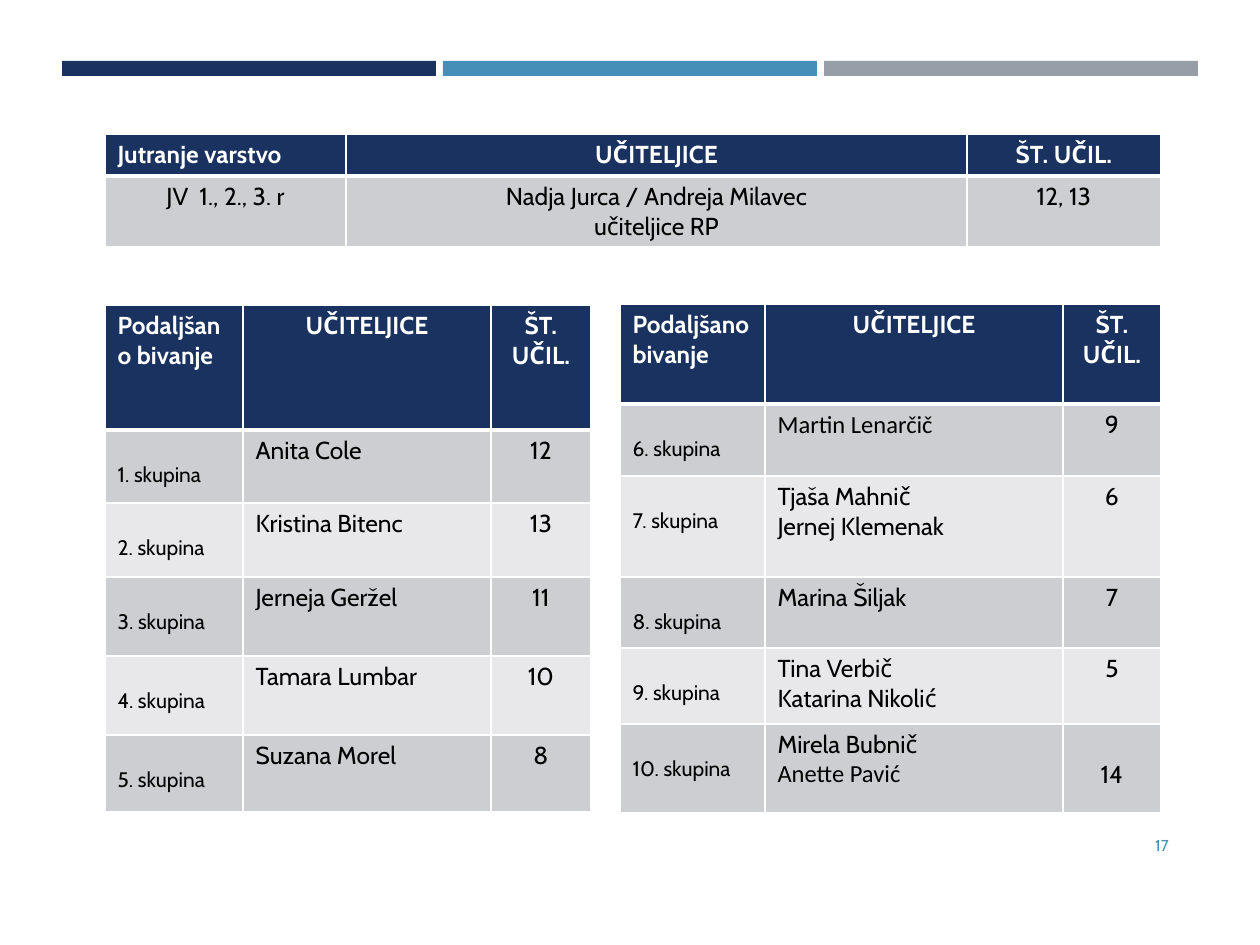
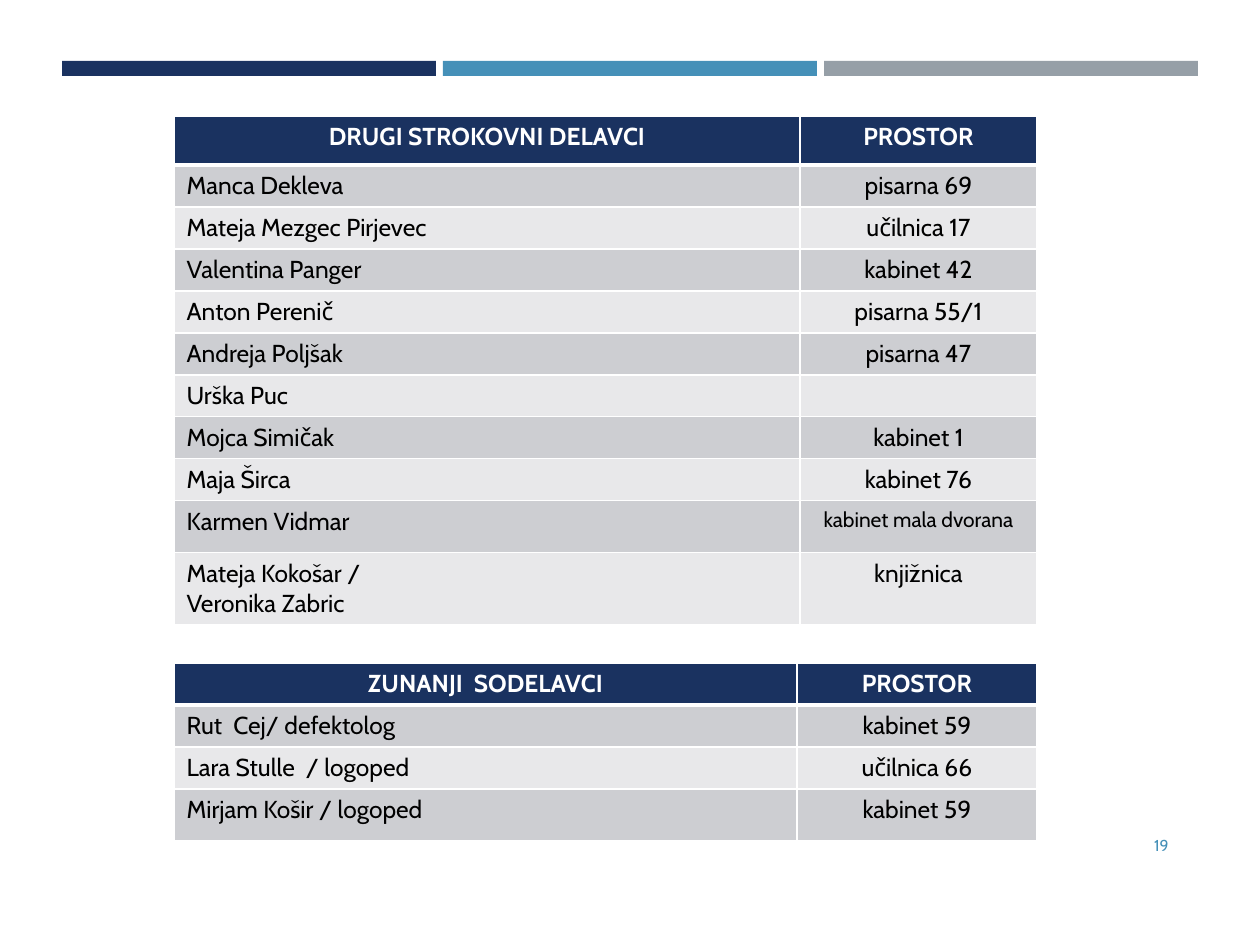
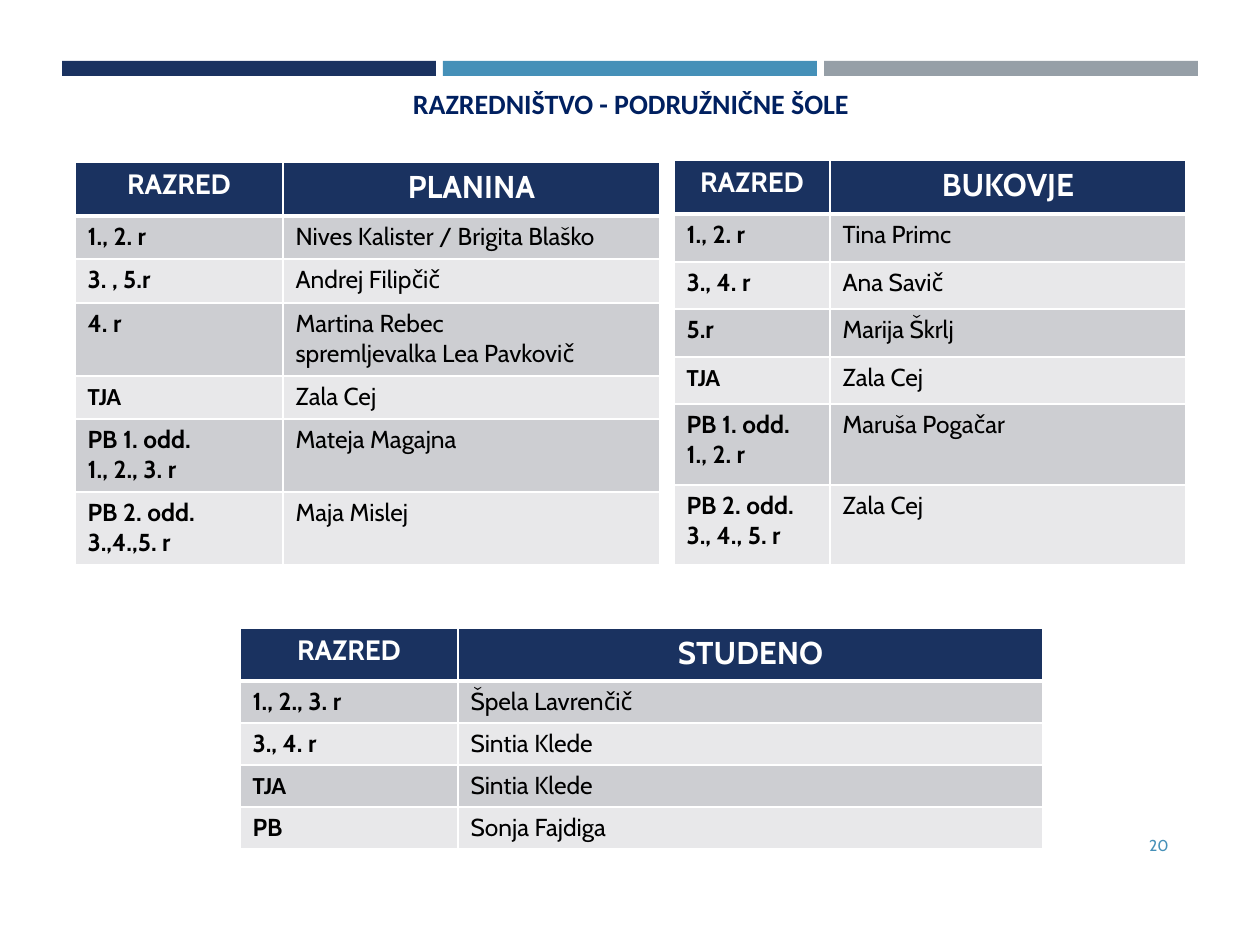
from lxml.etree import SubElement
from pptx import Presentation
from pptx.dml.color import RGBColor
from pptx.enum.shapes import MSO_SHAPE
from pptx.enum.text import MSO_ANCHOR, MSO_AUTO_SIZE, PP_ALIGN
from pptx.oxml.ns import qn
from pptx.util import Emu, Pt

PX_PER_INCH = 126
COLORS = {
    "navy": "1A3260", "blue": "4590B8", "gray": "969FA7", "title": "002060",
    "dark_row": "CDCED2", "light_row": "E8E8EA", "white": "FFFFFF", "black": "000000",
}
TITLE_ONLY, BLANK = 5, 6

# Cell formats
LEFT = {"align": PP_ALIGN.LEFT}
CENTER = {"align": PP_ALIGN.CENTER}
BOLD = {"bold": True}
CALIBRI = {"font": "Calibri"}
HEADER = {"align": PP_ALIGN.CENTER, "bold": True, "color": "white"}
GROUP = {"size": 12, "pad_top": 32}


def px(length):
    return Emu(round(length * 914400 / PX_PER_INCH))


def rgb(name):
    return RGBColor.from_string(COLORS[name])


def write_text(frame, text, size=14, font="Cabin", color="black", bold=False,
               align=PP_ALIGN.LEFT, spacing=None):
    """Write one paragraph a line; a line may be (text, own format)."""
    lines = text if isinstance(text, list) else text.split("\n")
    for index, line in enumerate(lines):
        words, own = line if isinstance(line, tuple) else (line, {})
        paragraph = frame.add_paragraph() if index else frame.paragraphs[0]
        paragraph.alignment = align
        if spacing:
            paragraph.line_spacing = spacing
        if not words:
            # An empty cell keeps the line height of its text size
            SubElement(paragraph._p, qn("a:endParaRPr"), sz=str(size * 100))
            continue
        run = paragraph.add_run()
        run.text = words
        run.font.size = Pt(size)
        run.font.name = own.get("font", font)
        run.font.bold = bold
        run.font.color.rgb = rgb(color)


def add_bands(slide):
    for index, color in enumerate(("navy", "blue", "gray")):
        band = slide.shapes.add_shape(
            MSO_SHAPE.RECTANGLE, px(62 + 381 * index), px(61), px(374), px(15))
        band.shadow.inherit = False
        band.fill.solid()
        band.fill.fore_color.rgb = rgb(color)
        band.line.fill.background()


def add_page_number(slide, number):
    box = slide.shapes.add_textbox(px(1075), px(820), px(106), px(50))
    box.text_frame.word_wrap = True
    box.text_frame.vertical_anchor = MSO_ANCHOR.MIDDLE
    write_text(box.text_frame, number, size=9, color="blue", align=PP_ALIGN.RIGHT)


def add_page(deck, number, layout=BLANK):
    slide = deck.slides.add_slide(deck.slide_layouts[layout])
    add_bands(slide)
    add_page_number(slide, number)
    return slide


def set_title(slide, text):
    title = slide.shapes.title
    title.left, title.top, title.width, title.height = px(88), px(84), px(1086), px(56)
    frame = title.text_frame
    frame.auto_size = MSO_AUTO_SIZE.NONE
    frame.vertical_anchor = MSO_ANCHOR.TOP
    write_text(frame, text, size=16, font="Calibri", color="title", bold=True,
               align=PP_ALIGN.CENTER, spacing=0.9)


def set_borders(cell, row):
    """White rules, with a thick one under the header row."""
    widths = {"L": 1, "R": 1, "T": 3 if row == 1 else 1, "B": 3 if row == 0 else 1}
    properties = cell._tc.get_or_add_tcPr()
    for side, width in widths.items():
        line = SubElement(properties, qn(f"a:ln{side}"), w=str(Pt(width)))
        fill = SubElement(line, qn("a:solidFill"))
        SubElement(fill, qn("a:srgbClr"), val=COLORS["white"])


def fill_cell(cell, content, row, column_format):
    text, own = content if isinstance(content, tuple) else (content, {})
    text_format = {**(column_format if row else HEADER), **own}
    cell.margin_top = px(text_format.pop("pad_top", 6))
    set_borders(cell, row)
    cell.fill.solid()
    shade = "dark_row" if row % 2 else "light_row"
    cell.fill.fore_color.rgb = rgb(shade if row else "navy")
    write_text(cell.text_frame, text, **text_format)


def add_staff_table(slide, left, top, widths, heights, formats, rows):
    table = slide.shapes.add_table(
        len(heights), len(widths), px(left), px(top),
        px(sum(widths)), px(sum(heights))).table
    for column, width in zip(table.columns, widths):
        column.width = px(width)
    for index, (row, height) in enumerate(zip(table.rows, heights)):
        row.height = px(height)
        for cell, content, column_format in zip(row.cells, rows[index], formats):
            fill_cell(cell, content, index, column_format)


def add_care_page(deck):
    slide = add_page(deck, "17")
    teachers, room = "UČITELJICE", "ŠT. UČIL."
    after_school = [("Podaljšano bivanje", LEFT), teachers, room]

    # Morning care
    add_staff_table(slide, 105, 134, [241, 621, 194], [42, 70], [CENTER] * 3, [
        [("Jutranje varstvo", LEFT), teachers, room],
        ["JV  1., 2., 3. r", "Nadja Jurca / Andreja Milavec\nučiteljice RP", "12, 13"],
    ])

    # After-school groups
    formats = [GROUP, LEFT, CENTER]
    add_staff_table(slide, 105, 305, [138, 248, 100], [125, 73, 74, 79, 79, 77], formats, [
        after_school,
        ["1. skupina", "Anita Cole", "12"],
        ["2. skupina", "Kristina Bitenc", "13"],
        ["3. skupina", "Jerneja Geržel", "11"],
        ["4. skupina", "Tamara Lumbar", "10"],
        ["5. skupina", "Suzana Morel", "8"],
    ])
    add_staff_table(slide, 620, 304, [145, 298, 98], [100, 72, 101, 71, 76, 89], formats, [
        after_school,
        ["6. skupina", ("Martin Lenarčič", CALIBRI), "9"],
        ["7. skupina", "Tjaša Mahnič\nJernej Klemenak", "6"],
        ["8. skupina", "Marina Šiljak", "7"],
        ["9. skupina", "Tina Verbič\nKatarina Nikolić", "5"],
        ["10. skupina", ["Mirela Bubnič", ("Anette Pavić", CALIBRI)],
         ("14", {"pad_top": 36})],
    ])


def add_specialists_page(deck):
    slide = add_page(deck, "19")
    formats = [LEFT, CENTER]

    # School specialists
    add_staff_table(slide, 174, 116, [626, 237], [49] + [42] * 8 + [52, 72], formats, [
        ["DRUGI STROKOVNI DELAVCI", "PROSTOR"],
        ["Manca Dekleva", "pisarna 69"],
        ["Mateja Mezgec Pirjevec", "učilnica 17"],
        ["Valentina Panger", "kabinet 42"],
        ["Anton Perenič", "pisarna 55/1"],
        ["Andreja Poljšak", "pisarna 47"],
        ["Urška Puc", ""],
        ["Mojca Simičak", "kabinet 1"],
        ["Maja Širca", "kabinet 76"],
        ["Karmen Vidmar", ("kabinet mala dvorana", {"size": 12})],
        ["Mateja Kokošar /\nVeronika Zabric", "knjižnica"],
    ])

    # External specialists
    add_staff_table(slide, 174, 663, [623, 240], [42, 42, 42, 52], formats, [
        ["ZUNANJI  SODELAVCI", "PROSTOR"],
        ["Rut  Cej/ defektolog", "kabinet 59"],
        ["Lara Stulle  / logoped", "učilnica 66"],
        ["Mirjam Košir / logoped", "kabinet 59"],
    ])


def add_branch_schools_page(deck):
    slide = add_page(deck, "20", TITLE_ONLY)
    set_title(slide, "RAZREDNIŠTVO - PODRUŽNIČNE ŠOLE")
    formats = [BOLD, LEFT]
    english = ("TJA", CALIBRI)

    def add_school(left, top, widths, heights, school, classes):
        header = [("RAZRED", {"size": 16}), (school, {"size": 18})]
        add_staff_table(slide, left, top, widths, heights, formats, [header] + classes)

    add_school(75, 162, [208, 377], [54, 43, 44, 73, 43, 73, 73], "PLANINA", [
        ["1., 2. r", "Nives Kalister / Brigita Blaško"],
        ["3. , 5.r", "Andrej Filipčič"],
        ["4. r", "Martina Rebec\nspremljevalka Lea Pavkovič"],
        [english, "Zala Cej"],
        ["PB 1. odd.\n1., 2., 3. r", "Mateja Magajna"],
        ["PB 2. odd.\n3.,4.,5. r", "Maja Mislej"],
    ])
    add_school(674, 160, [156, 356], [54, 48, 47, 48, 47, 81, 80], "BUKOVJE", [
        ["1., 2. r", "Tina Primc"],
        ["3., 4. r", "Ana Savič"],
        ["5.r", "Marija Škrlj"],
        [english, "Zala Cej"],
        ["PB 1. odd.\n1., 2. r", "Maruša Pogačar"],
        ["PB 2. odd.\n3., 4., 5. r", "Zala Cej"],
    ])
    add_school(240, 628, [218, 585], [53] + [42] * 4, "STUDENO", [
        ["1., 2., 3. r", "Špela Lavrenčič"],
        ["3., 4. r", "Sintia Klede"],
        [english, "Sintia Klede"],
        ["PB", "Sonja Fajdiga"],
    ])


def main():
    deck = Presentation()
    deck.slide_width, deck.slide_height = px(1260), px(945)
    add_care_page(deck)
    add_specialists_page(deck)
    add_branch_schools_page(deck)
    deck.save("out.pptx")


if __name__ == "__main__":
    main()
